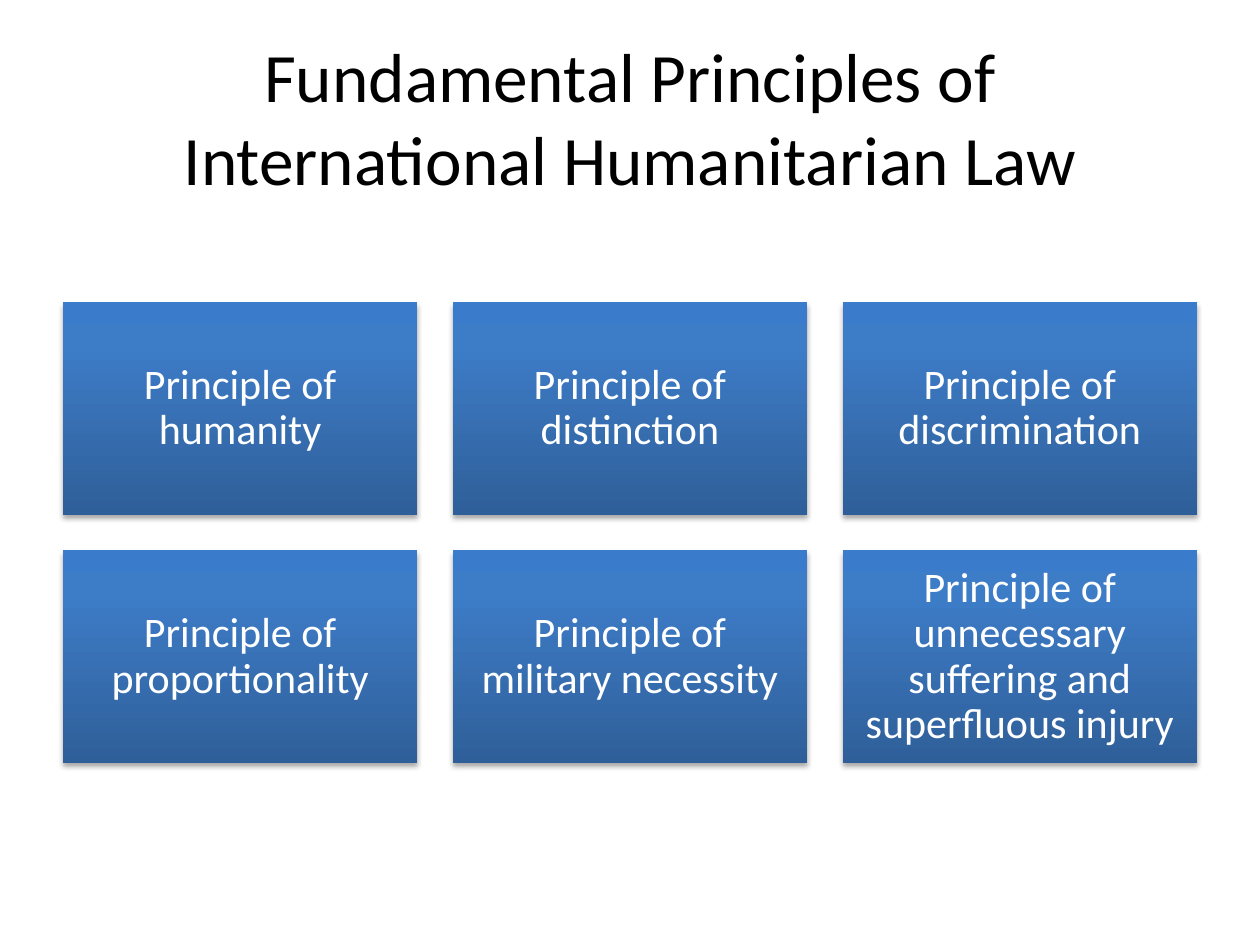
from copy import deepcopy
from dataclasses import dataclass

from lxml.etree import SubElement
from pptx import Presentation
from pptx.dml.color import RGBColor
from pptx.enum.shapes import MSO_SHAPE as Shape
from pptx.enum.text import MSO_ANCHOR as Anchor, MSO_AUTO_SIZE as AutoSize, PP_ALIGN as Align
from pptx.oxml.ns import qn
from pptx.util import Pt


@dataclass(frozen=True)
class Theme:
    font: str = "Calibri"
    title_size: float = 39.6
    card_size: float = 24
    title_color: str = "000000"
    card_color: str = "FFFFFF"
    shadow_color: str = "000000"
    gradient: tuple = ((0, "2F5F99"), (0.8, "3D7CC7"), (1, "3A7CCB"))


THEME = Theme()
TITLE = "Fundamental Principles of International Humanitarian Law"
PRINCIPLES = (
    "humanity",
    "distinction",
    "discrimination",
    "proportionality",
    "military necessity",
    "unnecessary suffering and superfluous injury",
)
COLUMNS = 3
MARGIN, GRID_TOP = 36, 172.8
CARD_WIDTH, CARD_HEIGHT, GAP = 202.5, 121.5, 20.25


def write_text(shape, text, size, color):
    frame = shape.text_frame
    frame.text = text
    frame.word_wrap = True
    frame.auto_size = AutoSize.NONE
    frame.vertical_anchor = Anchor.MIDDLE
    paragraph = frame.paragraphs[0]
    paragraph.alignment = Align.CENTER
    font = paragraph.runs[0].font
    font.name = THEME.font
    font.size = Pt(size)
    font.color.rgb = RGBColor.from_string(color)
    return paragraph


def fill_gradient(shape):
    shape.fill.gradient()
    shape.fill.gradient_angle = 90
    stop_list = shape._element.spPr.find(".//" + qn("a:gsLst"))
    stop_list.append(deepcopy(stop_list[0]))
    for stop, (position, color) in zip(shape.fill.gradient_stops, THEME.gradient):
        stop.position = position
        stop.color.rgb = RGBColor.from_string(color)


def add_shadow(shape):
    shape.shadow.inherit = False
    effects = shape._element.spPr.find(qn("a:effectLst"))
    shadow = SubElement(effects, qn("a:outerShdw"), blurRad=str(Pt(3.1)),
                        dist=str(Pt(1.8)), dir="5400000", rotWithShape="0")
    color = SubElement(shadow, qn("a:srgbClr"), val=THEME.shadow_color)
    SubElement(color, qn("a:alpha"), val="35000")


def add_title(slide):
    title = slide.shapes.title
    title.left, title.top, title.width, title.height = Pt(MARGIN), Pt(21.6), Pt(648), Pt(90)
    write_text(title, TITLE, THEME.title_size, THEME.title_color)


def add_card(slide, index, principle):
    row, column = divmod(index, COLUMNS)
    left = MARGIN + column * (CARD_WIDTH + GAP)
    top = GRID_TOP + row * (CARD_HEIGHT + GAP)
    card = slide.shapes.add_shape(
        Shape.RECTANGLE, Pt(left), Pt(top), Pt(CARD_WIDTH), Pt(CARD_HEIGHT))
    fill_gradient(card)
    card.line.fill.background()
    add_shadow(card)
    paragraph = write_text(card, f"Principle of {principle}", THEME.card_size, THEME.card_color)
    paragraph.line_spacing = 0.9
    frame = card.text_frame
    frame.margin_left = frame.margin_right = frame.margin_top = frame.margin_bottom = Pt(7.2)


def main():
    presentation = Presentation()
    presentation.slide_width, presentation.slide_height = Pt(720), Pt(540)
    slide = presentation.slides.add_slide(presentation.slide_layouts.get_by_name("Title Only"))
    add_title(slide)
    for index, principle in enumerate(PRINCIPLES):
        add_card(slide, index, principle)
    presentation.save("out.pptx")


if __name__ == "__main__":
    main()
